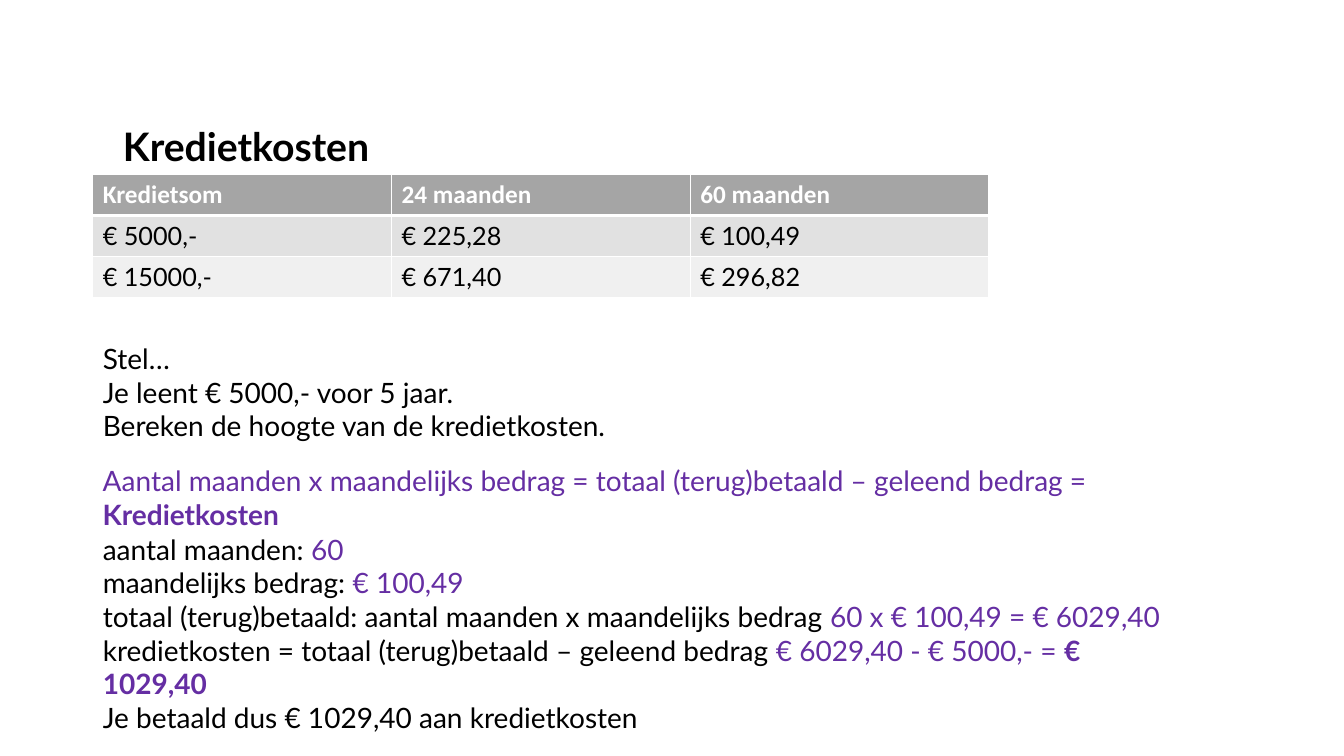
from lxml import etree
from pptx import Presentation
from pptx import util as u
from pptx.dml.color import RGBColor
from pptx.enum import text
from pptx.oxml.ns import qn

COLORS = {"ink": "000000", "answer": "652EA3", "white": "FFFFFF",
          "header": "A5A5A5", "odd": "E1E1E1", "even": "F0F0F0"}
LEFT = 6.9  # shared left edge, percent of the slide width


class LessonSlide:
    """Places elements by percent of the slide's width and height."""
    font, size = "Lato", 20

    def __init__(self, presentation):
        self.presentation = presentation
        self.slide = presentation.slides.add_slide(presentation.slide_layouts[3])

    def box(self, left, top, width, height):
        across, down = self.presentation.slide_width, self.presentation.slide_height
        return [u.Emu(int(share * side / 100)) for share, side in
                ((left, across), (top, down), (width, across), (height, down))]

    def style(self, run, color="ink", bold=False, size=None, font=None):
        run.font.name = font or self.font
        run.font.size = u.Pt(size or self.size)
        run.font.bold = bold
        run.font.color.rgb = RGBColor.from_string(COLORS[color])

    def fill_text(self, shape, paragraphs, size=None):
        """Each paragraph is a list of (words, color, bold) runs."""
        frame = shape.text_frame
        frame.word_wrap = True
        frame.auto_size = text.MSO_AUTO_SIZE.NONE
        frame.vertical_anchor = text.MSO_ANCHOR.TOP
        for index, parts in enumerate(paragraphs):
            paragraph = frame.paragraphs[0] if index == 0 else frame.add_paragraph()
            properties = paragraph._p.get_or_add_pPr()
            properties.set("marL", "0")
            properties.set("indent", "0")
            etree.SubElement(properties, qn("a:buNone"))
            paragraph.alignment = text.PP_ALIGN.LEFT
            paragraph.space_before = u.Pt(0)
            for words, color, bold in parts:
                run = paragraph.add_run()
                run.text = words
                self.style(run, color, bold, size)

    def placeholder(self, index, area, paragraphs, size=None):
        shape = self.slide.placeholders[index]
        shape.left, shape.top, shape.width, shape.height = self.box(*area)
        self.fill_text(shape, paragraphs, size)

    def text_box(self, area, paragraphs):
        self.fill_text(self.slide.shapes.add_textbox(*self.box(*area)), paragraphs)

    def border(self, cell, side, points):
        line = etree.SubElement(cell._tc.get_or_add_tcPr(), qn("a:ln" + side),
                                w=str(u.Pt(points)))
        fill = etree.SubElement(line, qn("a:solidFill"))
        etree.SubElement(fill, qn("a:srgbClr"), val=COLORS["white"])

    def table(self, area, rows):
        table = self.slide.shapes.add_table(len(rows), len(rows[0]), *self.box(*area)).table
        for row, values in enumerate(rows):
            for column, value in enumerate(values):
                cell = table.cell(row, column)
                cell.text_frame.text = value
                run = cell.text_frame.paragraphs[0].runs[0]
                if row == 0:
                    self.style(run, "white", True, 18, "Calibri")
                else:
                    self.style(run, size=18)
                for side in "LRTB":
                    thick = (row, side) in ((0, "B"), (1, "T"))
                    self.border(cell, side, 3 if thick else 1)
                shade = "header" if row == 0 else ("even", "odd")[row % 2]
                cell.fill.solid()
                cell.fill.fore_color.rgb = RGBColor.from_string(COLORS[shade])


def ink(words):
    return words, "ink", False


def answer(words, bold=False):
    return words, "answer", bold


def main():
    presentation = Presentation()
    presentation.slide_width, presentation.slide_height = u.Inches(13.33), u.Inches(7.5)
    lesson = LessonSlide(presentation)

    # Title and monthly amounts
    lesson.placeholder(0, (8.4, 15.47, 66.54, 7.6),
                       [[("Kredietkosten", "ink", True)]], size=28)
    lesson.table((LEFT, 23.07, 66.69, 16.27), [
        ("Kredietsom", "24 maanden", "60 maanden"),
        ("€ 5000,-", "€ 225,28", "€ 100,49"),
        ("€ 15000,-", "€ 671,40", "€ 296,82")])

    # Question
    lesson.placeholder(1, (LEFT, 44.53, 82.15, 16), [
        [ink("Stel…")],
        [ink("Je leent € 5000,- voor 5 jaar.")],
        [ink("Bereken de hoogte van de kredietkosten.")]])

    # Formula
    lesson.text_box((LEFT, 60.67, 87.7, 10.27), [
        [answer("Aantal maanden x maandelijks bedrag = totaal (terug)betaald"
                " – geleend bedrag = "), answer("Kredietkosten", True)]])

    # Worked answer
    lesson.placeholder(2, (LEFT, 69.73, 82.15, 28.27), [
        [ink("aantal maanden: "), answer("60")],
        [ink("maandelijks bedrag: "), answer("€ 100,49")],
        [ink("totaal (terug)betaald: aantal maanden x maandelijks bedrag "),
         answer("60 x € 100,49 = € 6029,40")],
        [ink("kredietkosten = totaal (terug)betaald – geleend bedrag "),
         answer("€ 6029,40 - € 5000,- = "), answer("€ 1029,40", True)],
        [ink("Je betaald dus € 1029,40 aan kredietkosten")]])

    presentation.save("out.pptx")


if __name__ == "__main__":
    main()
